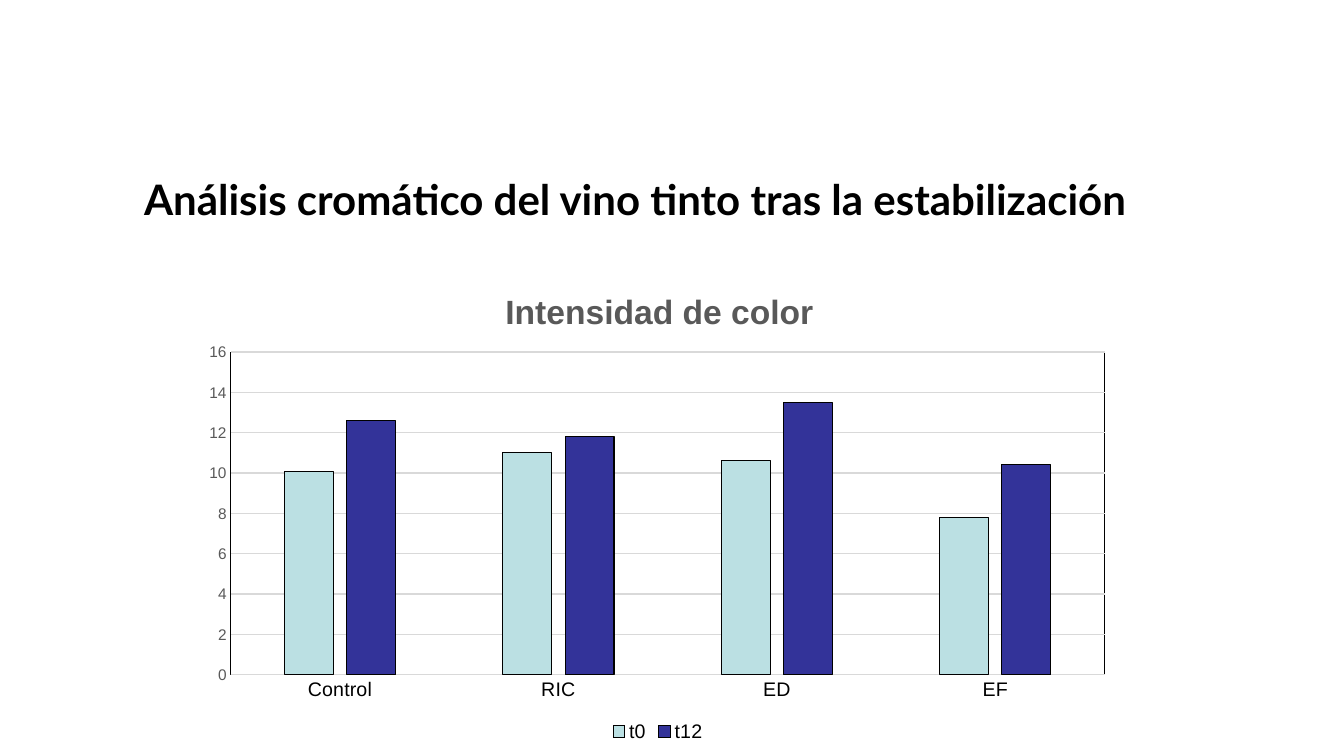
from lxml import etree
from pptx import Presentation
from pptx import util as u
from pptx.chart.data import CategoryChartData
from pptx.dml.color import RGBColor
from pptx.enum import chart as charts
from pptx.oxml import parse_xml
from pptx.oxml.ns import nsdecls, qn

BLACK = RGBColor(0x00, 0x00, 0x00)
GREY = RGBColor(0x59, 0x59, 0x59)
LIGHT_GREY = RGBColor(0xD9, 0xD9, 0xD9)
PALE_TEAL = RGBColor(0xBB, 0xE0, 0xE3)
NAVY = RGBColor(0x33, 0x33, 0x99)

CATEGORIES = ["Control", "RIC", "ED", "EF"]
SERIES = [
    ("t0", [10.1, 11, 10.6, 7.8], PALE_TEAL),
    ("t12", [12.6, 11.8, 13.5, 10.4], NAVY),
]


class SlideBuilder:
    heading_font = "Lato"
    chart_font = "Arial"
    line_width = u.Pt(0.75)

    def __init__(self, slide):
        self.slide = slide

    def style_font(self, font, name, size, color, bold=False):
        font.name, font.size, font.bold = name, u.Pt(size), bold
        font.color.rgb = color

    def style_line(self, line, color):
        line.color.rgb = color
        line.width = self.line_width

    def heading(self, words, left, top, width, height):
        box = self.slide.shapes.add_textbox(
            u.Inches(left), u.Inches(top), u.Inches(width), u.Inches(height))
        box.text_frame.word_wrap = True
        paragraph = box.text_frame.paragraphs[0]
        paragraph.text = words
        self.style_font(paragraph.font, self.heading_font, 30, BLACK, bold=True)

    def place(self, element, index, **fractions):
        """Position a chart part by fractions of the chart's size."""
        for layout in element.findall(qn("c:layout")):
            element.remove(layout)
        layout = parse_xml(f"<c:layout {nsdecls('c')}><c:manualLayout/></c:layout>")
        for tag, value in fractions.items():
            etree.SubElement(layout[0], qn(f"c:{tag}")).set("val", str(value))
        element.insert(index, layout)

    def column_chart(self, title, left, top, width, height):
        data = CategoryChartData()
        data.categories = CATEGORIES
        for name, values, _ in SERIES:
            data.add_series(name, values)
        chart = self.slide.shapes.add_chart(
            charts.XL_CHART_TYPE.COLUMN_CLUSTERED, u.Inches(left), u.Inches(top),
            u.Inches(width), u.Inches(height), data).chart
        self.style_font(chart.font, self.chart_font, 10, BLACK)

        # Columns
        plot = chart.plots[0]
        plot.gap_width, plot.overlap, plot.vary_by_categories = 219, -27, False
        for series, (_, _, color) in zip(plot.series, SERIES):
            series.format.fill.solid()
            series.format.fill.fore_color.rgb = color
            self.style_line(series.format.line, BLACK)

        # Axes
        for axis, size, color in ((chart.category_axis, 14, BLACK),
                                  (chart.value_axis, 11, GREY)):
            axis.major_tick_mark = axis.minor_tick_mark = charts.XL_TICK_MARK.NONE
            self.style_font(axis.tick_labels.font, self.chart_font, size, color)
        self.style_line(chart.category_axis.format.line, LIGHT_GREY)
        values = chart.value_axis
        values.minimum_scale, values.maximum_scale, values.major_unit = 0, 16, 2
        values.format.line.fill.background()
        values.has_major_gridlines = True
        self.style_line(values.major_gridlines.format.line, LIGHT_GREY)

        # Title and legend
        chart.has_title = True
        paragraph = chart.chart_title.text_frame.paragraphs[0]
        paragraph.text = title
        self.style_font(paragraph.font, self.chart_font, 24, GREY, bold=True)
        self.place(chart.chart_title._element, 1,
                   xMode="edge", yMode="edge", x=0.33, y=0.05)
        chart.has_legend = True
        chart.legend.position = charts.XL_LEGEND_POSITION.BOTTOM
        chart.legend.include_in_layout = False
        self.style_font(chart.legend.font, self.chart_font, 14, BLACK)

        # Plot area with a thin black frame
        area = chart._chartSpace.find(".//" + qn("c:plotArea"))
        self.place(area, 0, layoutTarget="inner", xMode="edge", yMode="edge",
                   x=0.042, y=0.189, w=0.937, h=0.663)
        area.append(parse_xml(
            f'<c:spPr {nsdecls("c", "a")}><a:noFill/><a:ln w="{self.line_width}">'
            f'<a:solidFill><a:srgbClr val="{BLACK}"/></a:solidFill></a:ln></c:spPr>'))


def main():
    presentation = Presentation()
    presentation.slide_width = u.Inches(13.33)
    presentation.slide_height = u.Inches(7.5)
    builder = SlideBuilder(presentation.slides.add_slide(presentation.slide_layouts[6]))
    builder.column_chart("Intensidad de color", 1.9, 2.58, 9.25, 4.83)
    builder.heading("Análisis cromático del vino tinto tras la estabilización",
                    1.33, 1.67, 11.05, 0.61)
    presentation.save("out.pptx")


if __name__ == "__main__":
    main()
